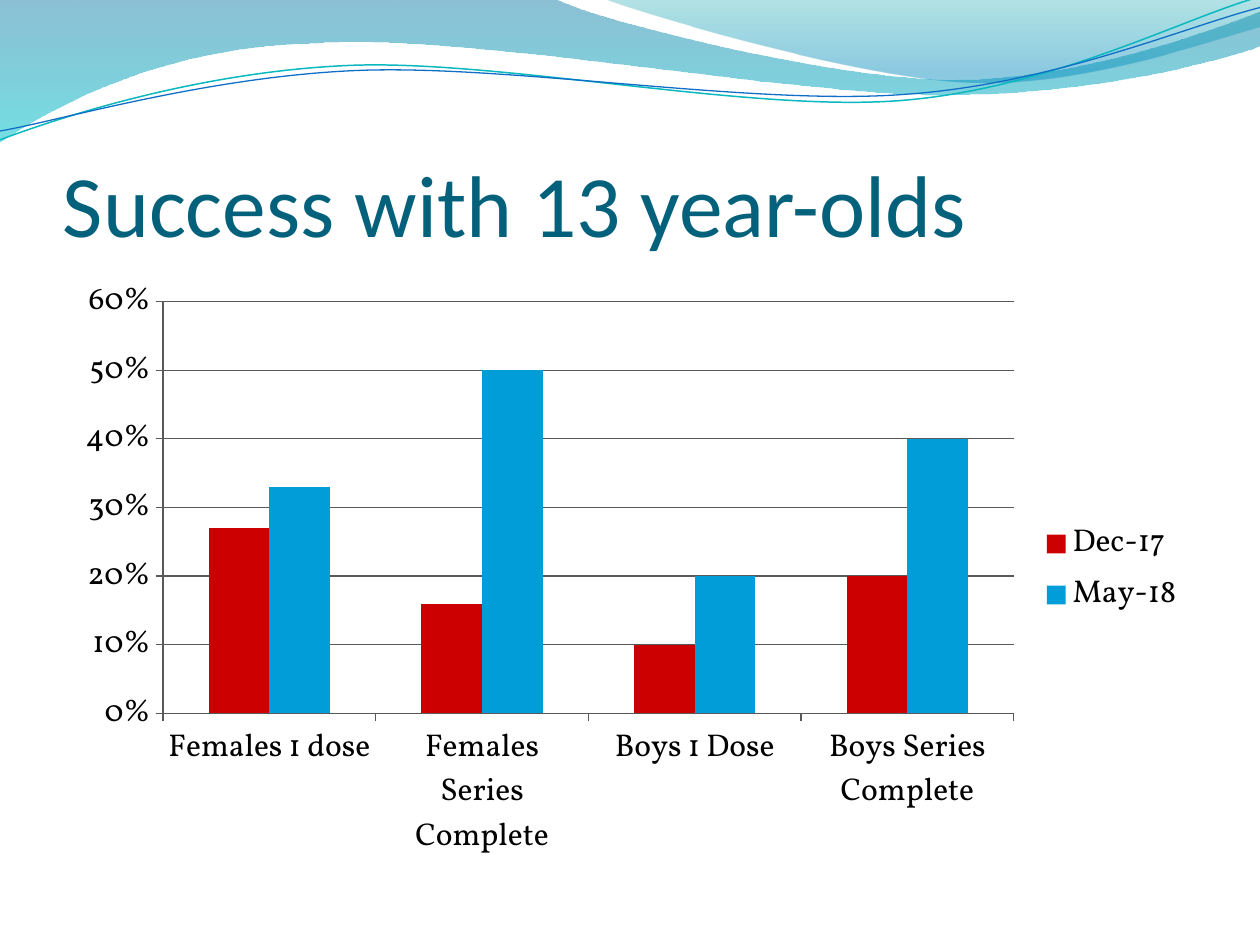
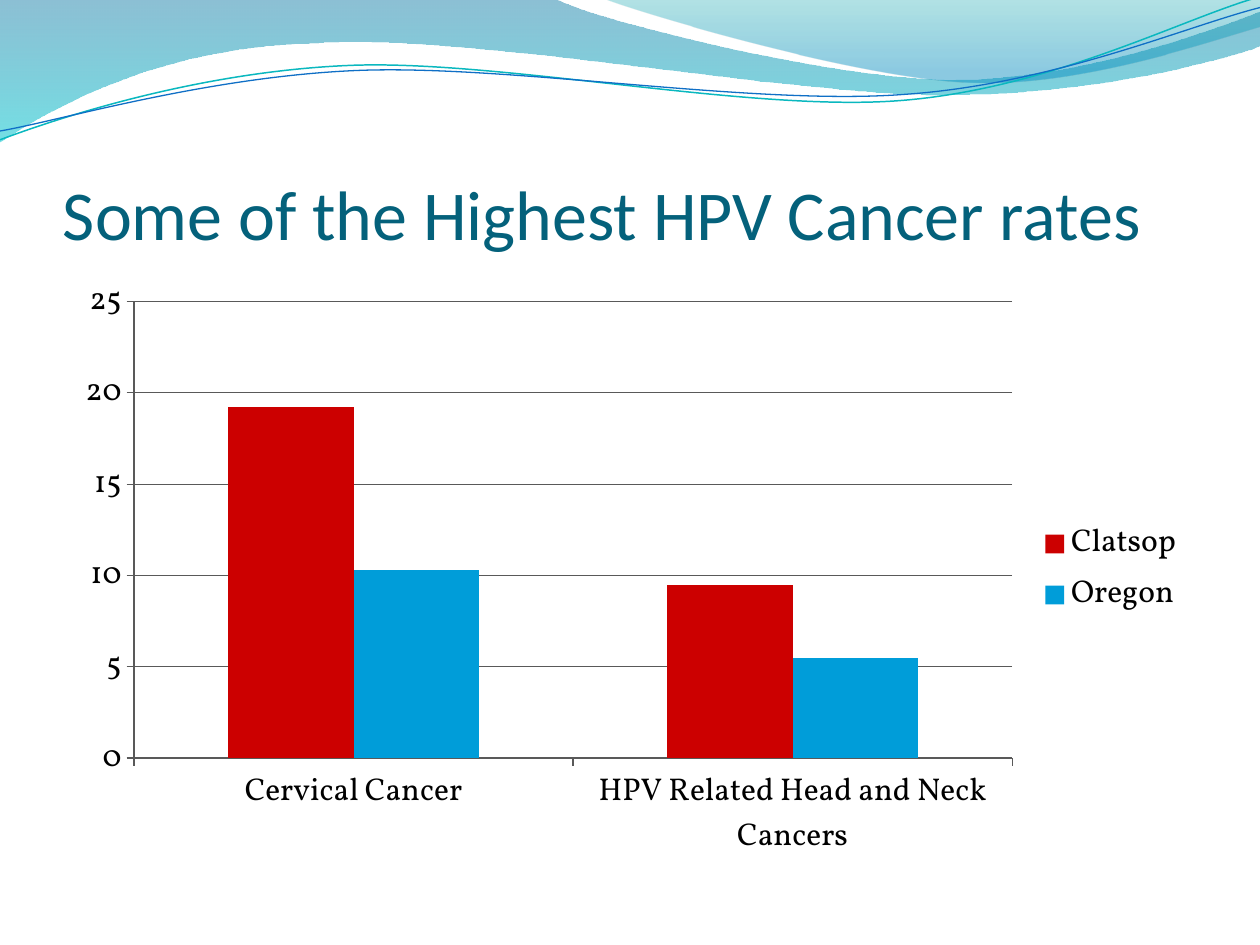
from lxml import etree
from pptx import Presentation
from pptx.chart.data import CategoryChartData
from pptx.dml.color import RGBColor
from pptx.enum.chart import XL_CHART_TYPE, XL_LEGEND_POSITION, XL_TICK_MARK
from pptx.enum.text import MSO_ANCHOR
from pptx.oxml.ns import qn
from pptx.util import Inches, Pt

COLUMNS = XL_CHART_TYPE.COLUMN_CLUSTERED
LEGEND_RIGHT = XL_LEGEND_POSITION.RIGHT
TICK_OUTSIDE = XL_TICK_MARK.OUTSIDE
ANCHOR_BOTTOM = MSO_ANCHOR.BOTTOM

TITLE_COLOR = RGBColor(0x04, 0x61, 0x7B)
TEXT_COLOR = RGBColor(0, 0, 0)
AXIS_COLOR = RGBColor(0x59, 0x59, 0x59)
SERIES_COLORS = [RGBColor(0xCC, 0, 0), RGBColor(0, 0x9D, 0xD9),
                 RGBColor(0x0B, 0xD0, 0xD9)]
WAVE_BLUE = RGBColor(0, 0x74, 0xA1)
WAVE_CYAN = RGBColor(0, 0xC6, 0xCF)
CREST_TEAL = RGBColor(0, 0xA1, 0xA9)
CREST_BLUE = RGBColor(0, 0x8B, 0xBF)
LINE_TEAL = RGBColor(0x0A, 0xB8, 0xBF)
LINE_BLUE = RGBColor(0x0F, 0x6F, 0xC6)

TITLE_FONT = "Calibri"
CHART_FONT = "Vollkorn"
TITLE_BOX = (0.5, 0.77, 9, 1.25)
CHART_BOX = (0.5, 2.12, 9, 4.8)

SLIDES = [
    {
        "title": "Success with 13 year-olds", "title_size": 50,
        "categories": ["Females 1 dose", "Females Series Complete",
                       "Boys 1 Dose", "Boys Series Complete"],
        "series": {"Dec-17": [0.27, 0.16, 0.1, 0.2],
                   "May-18": [0.33, 0.5, 0.2, 0.4],
                   "Column1": []},
        "maximum": 0.6, "unit": 0.1, "number_format": "0%",
    },
    {
        "title": "Some of the Highest HPV Cancer rates", "title_size": 40,
        "categories": ["Cervical Cancer", "HPV Related Head and Neck Cancers"],
        "series": {"Clatsop": [19.2, 9.5], "Oregon": [10.3, 5.5]},
        "maximum": 25, "unit": 5, "number_format": "General",
    },
]

# Outlines in inches: a pair is a corner, six numbers are a cubic curve.
# Gradient stops: position, colour, opacity in percent.
WAVES = [
    {"outline": [(0, 0), (4.4, -0.01),
                 (4.76, 0.17, 6.64, 0.63, 7.58, 0.63),
                 (8.53, 0.63, 9.58, 0.26, 10, 0.09), (10.01, 0.36),
                 (9.83, 0.44, 8.7, 0.76, 7.46, 0.75),
                 (6.22, 0.75, 3.82, 0.28, 2.57, 0.34),
                 (1.29, 0.36, 0.46, 0.83, -0.01, 1.13), (0, 0)],
     "stops": [(0, WAVE_BLUE, 45), (1, WAVE_CYAN, 55)]},
    {"outline": [(4.79, -0.01), (5.09, 0.11, 6.82, 0.62, 7.69, 0.65),
                 (8.56, 0.69, 9.61, 0.32, 10, 0.21), (10, 0), (4.79, -0.01)],
     "stops": [(0, CREST_TEAL, 30), (0.8, CREST_BLUE, 45)]},
    {"outline": [(0, 1.11), (0.48, 0.93, 1.58, 0.57, 2.77, 0.52),
                 (3.95, 0.47, 5.93, 0.89, 7.13, 0.8),
                 (8.33, 0.71, 9.38, 0.15, 9.98, -0.02)],
     "line": (LINE_TEAL, 0.85)},
    {"outline": [(0, 1.04), (0.47, 0.96, 1.64, 0.61, 2.83, 0.56),
                 (4.03, 0.51, 5.97, 0.84, 7.17, 0.75),
                 (8.36, 0.67, 9.41, 0.21, 10, 0.06)],
     "line": (LINE_BLUE, 0.75)},
]


def bend_curves(shape, segments):
    """Join the three straight steps of each six-number segment into a curve."""
    steps = iter(list(shape._element.iter(qn("a:lnTo"))))
    for segment in segments:
        first = next(steps)
        if len(segment) == 2:
            continue
        curve = etree.Element(qn("a:cubicBezTo"))
        first.addprevious(curve)
        for step in (first, next(steps), next(steps)):
            curve.append(step[0])
            step.getparent().remove(step)


def fill_gradient(fill, stops):
    """Fill from top to bottom with translucent colours."""
    fill.gradient()
    fill.gradient_angle = 270
    for stop, (position, color, opacity) in zip(fill.gradient_stops, stops):
        stop.position = position
        stop.color.rgb = color
        color_element = stop._gs.find(qn("a:srgbClr"))
        alpha = etree.SubElement(color_element, qn("a:alpha"))
        alpha.set("val", str(opacity * 1000))


def add_wave(slide, outline, stops=None, line=None):
    start, *segments = outline
    points = [tuple(map(Inches, segment[index:index + 2]))
              for segment in segments for index in range(0, len(segment), 2)]
    builder = slide.shapes.build_freeform(*map(Inches, start))
    builder.add_line_segments(points, close=stops is not None)
    shape = builder.convert_to_shape()
    bend_curves(shape, segments)
    shape.shadow.inherit = False
    if stops:
        fill_gradient(shape.fill, stops)
        shape.line.fill.background()
    else:
        shape.fill.background()
        color, width = line
        shape.line.color.rgb = color
        shape.line.width = Pt(width)


def style_font(font, size, name, color):
    font.size = Pt(size)
    font.name = name
    font.color.rgb = color


def add_text(slide, text, box, size, name, color, anchor):
    shape = slide.shapes.add_textbox(*map(Inches, box))
    frame = shape.text_frame
    frame.word_wrap = True
    frame.vertical_anchor = anchor
    frame.margin_left = frame.margin_right = frame.margin_bottom = 0
    frame.margin_top = Inches(0.05)
    run = frame.paragraphs[0].add_run()
    run.text = text
    style_font(run.font, size, name, color)


def add_column_chart(slide, content):
    data = CategoryChartData(number_format=content["number_format"])
    data.categories = content["categories"]
    for name, values in content["series"].items():
        data.add_series(name, values)
    chart = slide.shapes.add_chart(COLUMNS, *map(Inches, CHART_BOX), data).chart
    style_font(chart.font, 18, CHART_FONT, TEXT_COLOR)
    chart.has_title = False
    chart.has_legend = True
    chart.legend.position = LEGEND_RIGHT
    chart.legend.include_in_layout = False

    plot = chart.plots[0]
    plot.gap_width = 150
    plot.vary_by_categories = False
    for series, color in zip(plot.series, SERIES_COLORS):
        series.format.fill.solid()
        series.format.fill.fore_color.rgb = color

    value_axis = chart.value_axis
    value_axis.minimum_scale = 0
    value_axis.maximum_scale = content["maximum"]
    value_axis.major_unit = content["unit"]
    value_axis.tick_labels.number_format = content["number_format"]
    value_axis.tick_labels.number_format_is_linked = False
    value_axis.has_major_gridlines = True
    for axis in (chart.category_axis, value_axis):
        axis.major_tick_mark = TICK_OUTSIDE
    for part in (chart.category_axis, value_axis, value_axis.major_gridlines):
        part.format.line.color.rgb = AXIS_COLOR
        part.format.line.width = Pt(0.75)


def main():
    presentation = Presentation()
    presentation.slide_width = Inches(10)
    presentation.slide_height = Inches(7.5)
    blank_layout = presentation.slide_layouts[6]
    for content in SLIDES:
        slide = presentation.slides.add_slide(blank_layout)
        for wave in WAVES:
            add_wave(slide, **wave)
        add_text(slide, content["title"], TITLE_BOX, size=content["title_size"],
                 name=TITLE_FONT, color=TITLE_COLOR, anchor=ANCHOR_BOTTOM)
        add_column_chart(slide, content)
    presentation.save("out.pptx")


if __name__ == "__main__":
    main()
